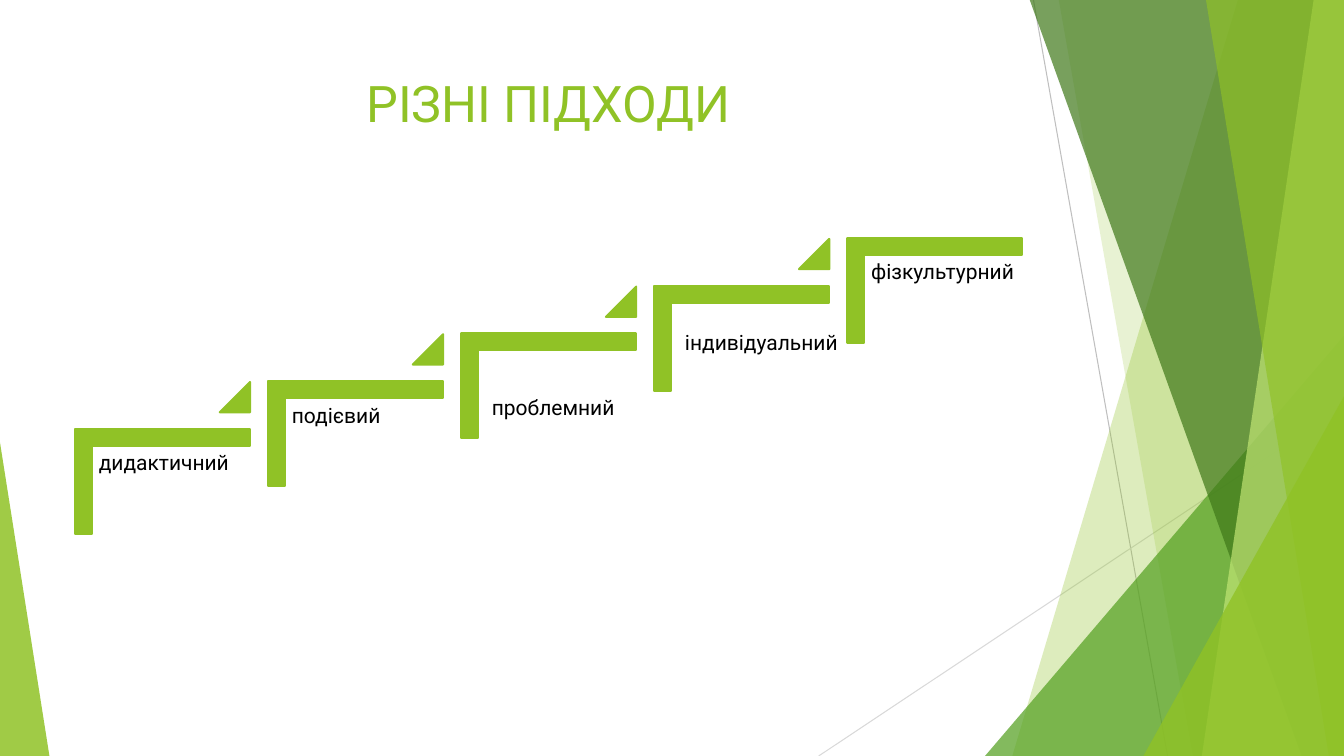
from pptx import Presentation
from pptx.dml.color import RGBColor
from pptx.enum.shapes import MSO_CONNECTOR, MSO_SHAPE
from pptx.enum.text import MSO_ANCHOR, PP_ALIGN
from pptx.oxml.ns import qn
from pptx.util import Inches, Pt
from lxml import etree

LIME = RGBColor(0x90, 0xC2, 0x26)
LEAF = RGBColor(0x54, 0xA0, 0x21)
MOSS = RGBColor(0x3F, 0x78, 0x19)
PALE = RGBColor(0xC0, 0xE4, 0x74)
GRAY = RGBColor(0xBF, 0xBF, 0xBF)
SILVER = RGBColor(0xD9, 0xD9, 0xD9)
BLACK = RGBColor(0, 0, 0)

deck = Presentation()
deck.slide_width = Inches(13.33)
deck.slide_height = Inches(7.5)
slide = deck.slides.add_slide(deck.slide_layouts[5])
shapes = slide.shapes


def paint(shape, color, alpha=None):
    """Fill a shape; with alpha (percent) it is see-through and has no line."""
    shape.shadow.inherit = False
    shape.fill.solid()
    shape.fill.fore_color.rgb = color
    if alpha is None:
        shape.line.color.rgb = color
        shape.line.width = Pt(1.5)
    else:
        shape.line.fill.background()
        tone = shape._element.spPr.find(qn("a:solidFill"))[0]
        etree.SubElement(tone, qn("a:alpha"), val=str(alpha * 1000))


def write(par, text, size, color):
    run = par.add_run()
    run.text = text
    run.font.name = "Roboto"
    run.font.size = Pt(size)
    run.font.color.rgb = color


# Thin lines behind the facets
for x1, y1, x2, y2, color in [
    (10.25, 0, 11.58, 7.5, GRAY),
    (13.33, 4.03, 8.12, 7.5, SILVER),
]:
    line = shapes.add_connector(
        MSO_CONNECTOR.STRAIGHT, Inches(x1), Inches(y1), Inches(x2), Inches(y2))
    line.line.color.rgb = color
    line.line.width = Pt(0.75)
    etree.SubElement(line._element.spPr, qn("a:effectLst"))

# Facets: four-sided ones by top and bottom x, triangles by box and apex
facets = [
    ("band", (12.28, 10.04), LIME, 30),
    ("band", (10.5, 11.83), LIME, 20),
    ("wedge", (9.77, 3.33, 3.56, 1), LEAF, 72),
    ("band", (10.21, 12.91), MOSS, 70),
    ("band", (13.03, 11.92), PALE, 70),
    ("band", (11.96, 13.18), LIME, 65),
    ("wedge", (11.34, 3.93, 1.99, 1), LIME, 80),
    ("wedge", (0, 4.39, 0.49, 0), LIME, 85),
]
for kind, place, color, alpha in facets:
    if kind == "band":
        top, base = place
        path = shapes.build_freeform(Inches(top), Inches(-0.01))
        path.add_line_segments([
            (Inches(13.33), Inches(-0.01)),
            (Inches(13.33), Inches(7.5)),
            (Inches(base), Inches(7.5)),
        ], close=True)
        facet = path.convert_to_shape()
    else:
        left, top, width, apex = place
        facet = shapes.add_shape(
            MSO_SHAPE.ISOSCELES_TRIANGLE, Inches(left), Inches(top),
            Inches(width), Inches(7.5 - top))
        facet.adjustments[0] = apex
    paint(facet, color, alpha)

# Title
title = shapes.title
title.left, title.top = Inches(0.74), Inches(0.67)
title.width, title.height = Inches(9.4), Inches(1.44)
title.text_frame.vertical_anchor = MSO_ANCHOR.TOP
head = title.text_frame.paragraphs[0]
head.alignment = PP_ALIGN.CENTER
write(head, "РІЗНІ ПІДХОДИ", 36, LIME)

# Staircase: label with its offset from the step, size and inset
STEP_X, STEP_Y = 1.915, 0.473
INNER = (-0.17, 0.52, 1.56, 1.37, 0.06)
steps = [
    ("дидактичний", INNER),
    ("подієвий", INNER),
    ("проблемний", (-0.14, 0.89, 1.66, 0.35, 0.1)),
    ("індивідуальний", (-0.14, 0.72, 2.01, 0.35, 0.1)),
    ("фізкультурний", INNER),
]
for i, (text, (dx, dy, width, height, inset)) in enumerate(steps):
    x, y = 1.09 + i * STEP_X, 3.91 - i * STEP_Y
    step = shapes.add_shape(
        MSO_SHAPE.CORNER, Inches(x), Inches(y), Inches(1.04), Inches(1.73))
    step.rotation = 90
    step.adjustments[0] = step.adjustments[1] = 0.161
    paint(step, LIME)

    if i < len(steps) - 1:
        mark = shapes.add_shape(
            MSO_SHAPE.ISOSCELES_TRIANGLE, Inches(x + 1.09), Inches(y - 0.12),
            Inches(0.3), Inches(0.3))
        mark.adjustments[0] = 1
        paint(mark, LIME)

    label = shapes.add_textbox(
        Inches(x + dx), Inches(y + dy), Inches(width), Inches(height))
    frame = label.text_frame
    frame.word_wrap = True
    frame.margin_left = frame.margin_right = Inches(inset)
    frame.margin_top = frame.margin_bottom = Inches(min(inset, 0.06))
    par = frame.paragraphs[0]
    if inset == 0.06:
        par.line_spacing = 0.9
    write(par, text, 15, BLACK)

deck.save("out.pptx")
